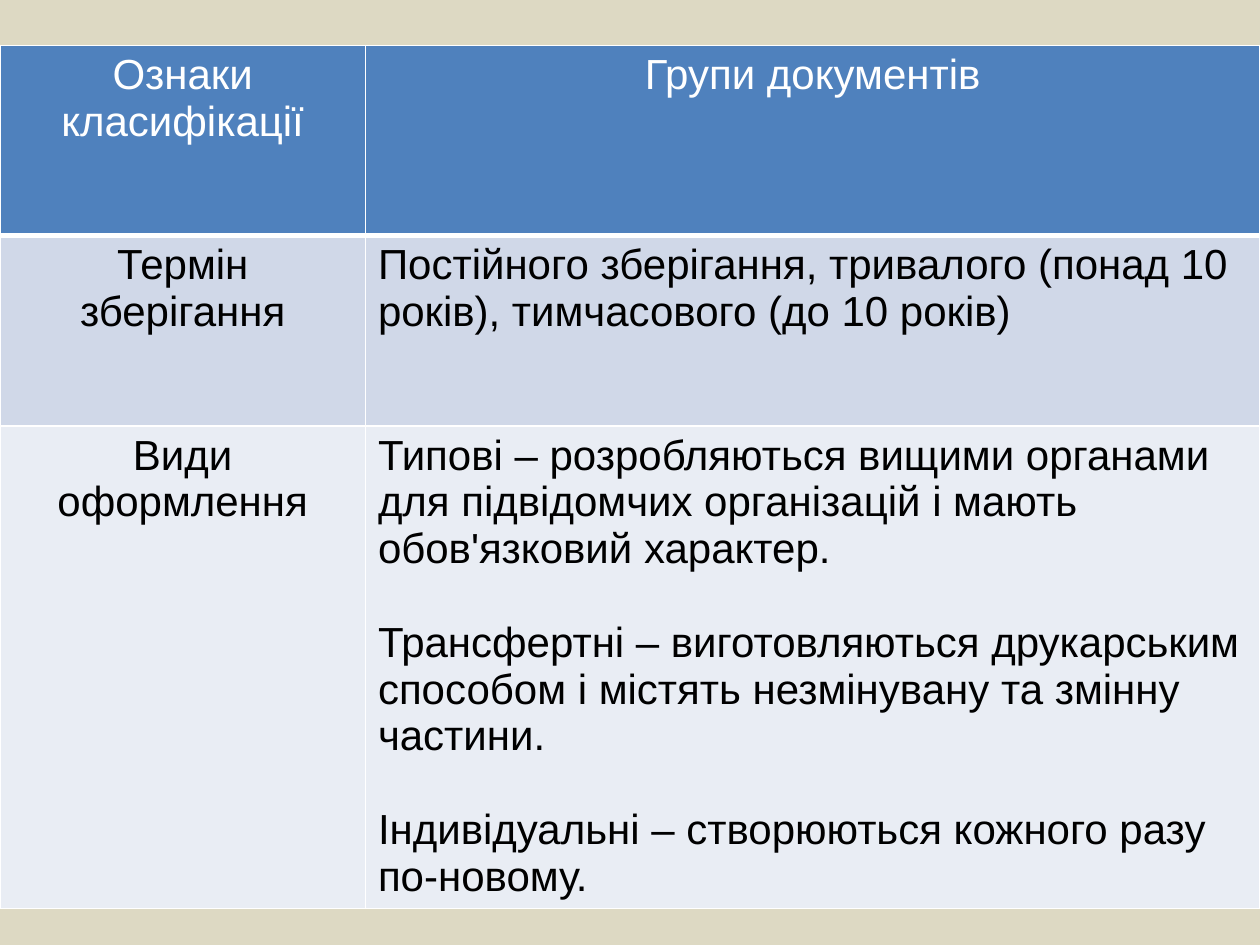
from lxml.etree import SubElement
from pptx import Presentation
from pptx.dml.color import RGBColor
from pptx.enum.text import PP_ALIGN
from pptx.oxml.ns import qn
from pptx.util import Inches, Pt

# Each cell is a list of groups; a group is a list of paragraphs.
ROWS = [
    ([["Ознаки", "класифікації"]],
     [["Групи документів"]]),
    ([["Термін зберігання"]],
     [["Постійного зберігання, тривалого (понад 10 років), "
       "тимчасового (до 10 років)"]]),
    ([["Види оформлення"]],
     [["Типові – розробляються вищими органами для підвідомчих "
       "організацій і мають обов'язковий характер."],
      ["Трансфертні – виготовляються друкарським",
       "способом і містять незмінувану та змінну частини."],
      ["Індивідуальні – створюються кожного разу по-новому."]]),
]
WIDTHS = [2.9, 7.1]
HEIGHTS = [1.51, 1.51, 3.83]
TOP = 0.36

THEME = {
    "back": "DDD9C3",
    "rule": "FFFFFF",
    "fills": ["4F81BD", "D0D8E8", "E9EDF4"],
    "inks": ["FFFFFF", "000000", "000000"],
    "font": {"name": "Arial", "size": Pt(24), "bold": False},
    "gap": Pt(26.7),
    "thin": 1,
    "thick": 3,
}


def paint(fill, color):
    fill.solid()
    fill.fore_color.rgb = RGBColor.from_string(color)


def frame(cell, row):
    """Draw the four borders, with a thick rule under the header."""
    thick = {0: "B", 1: "T"}.get(row)
    props = cell._tc.get_or_add_tcPr()
    for side in "LRTB":
        width = THEME["thick" if side == thick else "thin"]
        line = SubElement(props, qn(f"a:ln{side}"), w=str(Pt(width)))
        solid = SubElement(line, qn("a:solidFill"))
        SubElement(solid, qn("a:srgbClr"), val=THEME["rule"])


def write(cell, groups, align, ink):
    """Fill a cell, leaving one line of space between groups."""
    texts = [(text, g > 0 and n == 0)
             for g, group in enumerate(groups) for n, text in enumerate(group)]
    box = cell.text_frame
    for n, (text, apart) in enumerate(texts):
        para = box.add_paragraph() if n else box.paragraphs[0]
        para.alignment = align
        if apart:
            para.space_before = THEME["gap"]
        run = para.add_run()
        run.text = text
        for key, value in THEME["font"].items():
            setattr(run.font, key, value)
        run.font.color.rgb = RGBColor.from_string(ink)


def main():
    deck = Presentation()
    deck.slide_width, deck.slide_height = Inches(10), Inches(7.5)
    slide = deck.slides.add_slide(deck.slide_layouts[6])
    paint(slide.background.fill, THEME["back"])

    table = slide.shapes.add_table(
        len(ROWS), len(WIDTHS), Inches(0), Inches(TOP),
        Inches(sum(WIDTHS)), Inches(sum(HEIGHTS))).table
    for col, width in zip(table.columns, WIDTHS):
        col.width = Inches(width)
    for row, height in zip(table.rows, HEIGHTS):
        row.height = Inches(height)

    for r, row in enumerate(ROWS):
        for c, groups in enumerate(row):
            cell = table.cell(r, c)
            frame(cell, r)
            paint(cell.fill, THEME["fills"][r])
            centred = r == 0 or c == 0
            align = PP_ALIGN.CENTER if centred else PP_ALIGN.LEFT
            write(cell, groups, align, THEME["inks"][r])

    deck.save("out.pptx")


if __name__ == "__main__":
    main()
